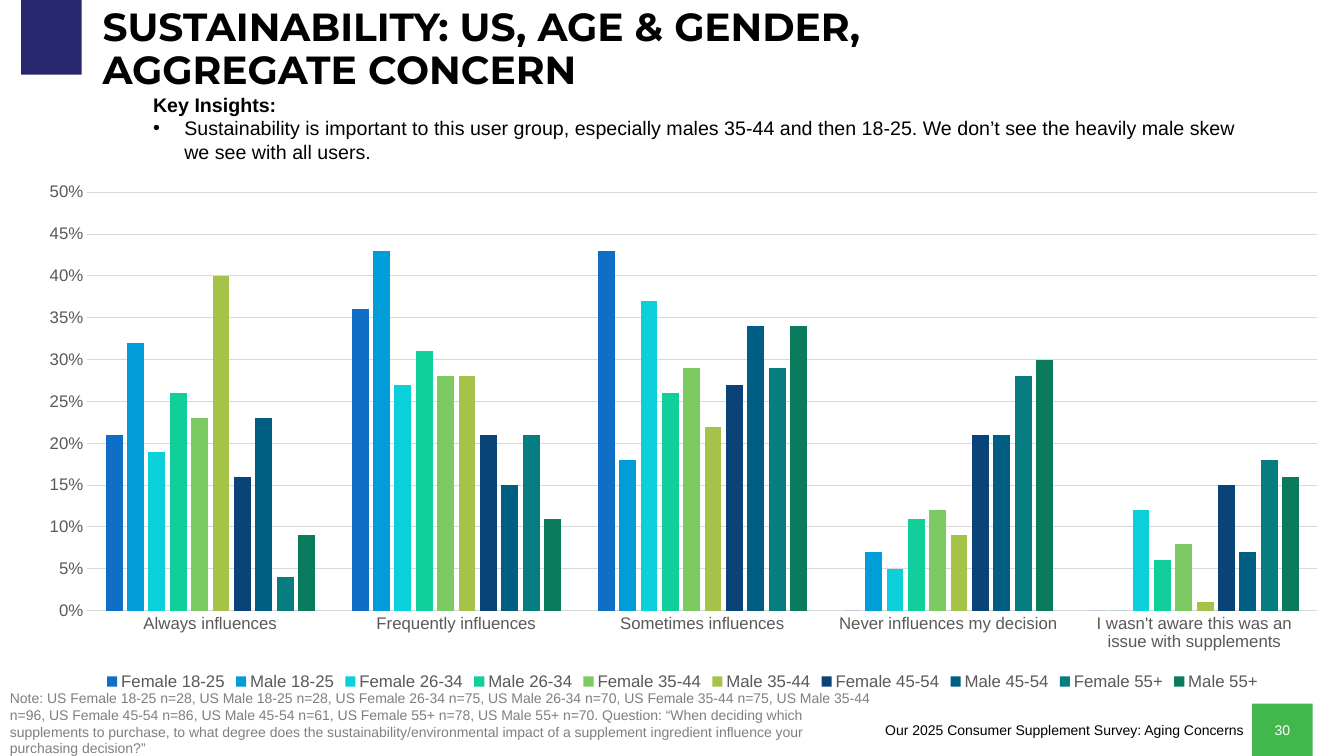
from lxml.etree import SubElement
from pptx import Presentation
from pptx.chart.data import CategoryChartData
from pptx.dml.color import RGBColor
from pptx.enum.chart import XL_CHART_TYPE, XL_LEGEND_POSITION, XL_TICK_MARK
from pptx.enum.shapes import MSO_SHAPE
from pptx.enum.text import MSO_ANCHOR, PP_ALIGN
from pptx.oxml.ns import qn
from pptx.util import Inches, Pt

TITLE = "SUSTAINABILITY: US, AGE & GENDER, \vAGGREGATE CONCERN"
INSIGHTS_HEADING = "Key Insights:"
INSIGHT = (
    "Sustainability is important to this user group, especially males 35-44 and then 18-25. "
    "We don’t see the heavily male skew we see with all users."
)
NOTE = (
    "Note: US Female 18-25 n=28, US Male 18-25 n=28, US Female 26-34 n=75, US Male 26-34 n=70, "
    "US Female 35-44 n=75, US Male 35-44 n=96, US Female 45-54 n=86, US Male 45-54 n=61, "
    "US Female 55+ n=78, US Male 55+ n=70. Question: “When deciding which supplements to purchase, "
    "to what degree does the sustainability/environmental impact of a supplement ingredient "
    "influence your purchasing decision?”"
)
FOOTER = "Our 2025 Consumer Supplement Survey: Aging Concerns"
PAGE_NUMBER = "30"

ANSWERS = [
    "Always influences",
    "Frequently influences",
    "Sometimes influences",
    "Never influences my decision",
    "I wasn't aware this was an issue with supplements",
]
GROUPS = [
    ("Female 18-25", "0F6FC6", (0.21, 0.36, 0.43, 0, 0)),
    ("Male 18-25", "009DD9", (0.32, 0.43, 0.18, 0.07, 0)),
    ("Female 26-34", "0BD0D9", (0.19, 0.27, 0.37, 0.05, 0.12)),
    ("Male 26-34", "10CF9B", (0.26, 0.31, 0.26, 0.11, 0.06)),
    ("Female 35-44", "7CCA62", (0.23, 0.28, 0.29, 0.12, 0.08)),
    ("Male 35-44", "A5C249", (0.4, 0.28, 0.22, 0.09, 0.01)),
    ("Female 45-54", "094377", (0.16, 0.21, 0.27, 0.21, 0.15)),
    ("Male 45-54", "005E82", (0.23, 0.15, 0.34, 0.21, 0.07)),
    ("Female 55+", "077D82", (0.04, 0.21, 0.29, 0.28, 0.18)),
    ("Male 55+", "0A7C5D", (0.09, 0.11, 0.34, 0.3, 0.16)),
]
PLOT_AREA = {"x": 0.05, "y": 0.04, "w": 0.93, "h": 0.8}
GRID_GREY = "D9D9D9"
LABEL_GREY = "595959"


def color(hex_code):
    return RGBColor.from_string(hex_code)


def style_font(font, size, hex_code, name="Arial", bold=False):
    font.size = Pt(size)
    font.name = name
    font.bold = bold
    font.color.rgb = color(hex_code)


def add_block(page, place, hex_code):
    block = page.shapes.add_shape(MSO_SHAPE.RECTANGLE, *map(Inches, place))
    block.shadow.inherit = False
    block.fill.solid()
    block.fill.fore_color.rgb = color(hex_code)
    block.line.fill.background()
    return block


def add_text(page, place, text, size, hex_code, **font_options):
    box = page.shapes.add_textbox(*map(Inches, place))
    frame = box.text_frame
    frame.word_wrap = True
    frame.text = text
    for para in frame.paragraphs:
        for span in para.runs:
            style_font(span.font, size, hex_code, **font_options)
    return frame


def make_bullet(para):
    properties = para._p.get_or_add_pPr()
    properties.set("marL", str(Inches(0.31)))
    properties.set("indent", str(Inches(-0.31)))
    SubElement(properties, qn("a:buFont"), typeface="Arial")
    SubElement(properties, qn("a:buChar"), char="•")


def place_plot(chart):
    """Fix the inner plot area as fractions of the chart frame."""
    plot_area = chart._chartSpace.chart.plotArea
    for old_layout in plot_area.findall(qn("c:layout")):
        plot_area.remove(old_layout)
    layout = SubElement(plot_area, qn("c:layout"))
    plot_area.insert(0, layout)
    manual = SubElement(layout, qn("c:manualLayout"))
    SubElement(manual, qn("c:layoutTarget"), val="inner")
    for side in "xy":
        SubElement(manual, qn(f"c:{side}Mode"), val="edge")
    for side, share in PLOT_AREA.items():
        SubElement(manual, qn(f"c:{side}"), val=str(share))


def add_influence_chart(page):
    data = CategoryChartData(number_format="0%")
    data.categories = ANSWERS
    for name, _, shares in GROUPS:
        data.add_series(name, shares)
    place = map(Inches, (0.21, 1.7, 13.12, 5.19))
    chart = page.shapes.add_chart(XL_CHART_TYPE.COLUMN_CLUSTERED, *place, data).chart
    chart.has_title = False
    style_font(chart.font, 12, "000000")

    plot = chart.plots[0]
    plot.vary_by_categories = False
    plot.gap_width = 219
    plot.overlap = -27
    for series, (_, hex_code, _) in zip(plot.series, GROUPS):
        series.format.fill.solid()
        series.format.fill.fore_color.rgb = color(hex_code)
        series.invert_if_negative = False

    answers, shares = chart.category_axis, chart.value_axis
    for axis in (answers, shares):
        axis.major_tick_mark = axis.minor_tick_mark = XL_TICK_MARK.NONE
        style_font(axis.tick_labels.font, 12, LABEL_GREY)
    shares.minimum_scale, shares.maximum_scale, shares.major_unit = 0, 0.5, 0.05
    shares.tick_labels.number_format = "0%"
    shares.tick_labels.number_format_is_linked = False
    shares.format.line.fill.background()
    for line in (answers.format.line, shares.major_gridlines.format.line):
        line.color.rgb = color(GRID_GREY)
        line.width = Pt(0.75)

    chart.has_legend = True
    chart.legend.position = XL_LEGEND_POSITION.BOTTOM
    chart.legend.include_in_layout = False
    style_font(chart.legend.font, 12, LABEL_GREY)
    place_plot(chart)


def main():
    deck = Presentation()
    deck.slide_width, deck.slide_height = Inches(13.33), Inches(7.5)
    page = deck.slides.add_slide(deck.slide_layouts[6])

    add_block(page, (0.21, -0.05, 0.6, 0.79), "27276E")
    footer = add_text(page, (8.64, 7.11, 3.79, 0.27), FOOTER, 10, "000000")
    footer.paragraphs[0].alignment = PP_ALIGN.RIGHT

    number = add_block(page, (12.42, 6.98, 0.6, 0.52), "42B74D").text_frame
    number.text = PAGE_NUMBER
    number.vertical_anchor = MSO_ANCHOR.MIDDLE
    number.paragraphs[0].alignment = PP_ALIGN.CENTER
    style_font(number.paragraphs[0].runs[0].font, 10, "FFFFFF")

    title = add_text(page, (0.92, 0.25, 11.5, 0.5), TITLE, 28, "000000",
                     name="Montserrat", bold=True)
    title.vertical_anchor = MSO_ANCHOR.MIDDLE
    title.paragraphs[0].line_spacing = 0.9

    add_text(page, (0, 6.79, 8.74, 0.77), NOTE, 10, "7F7F7F")

    insights = add_text(page, (1.42, 0.87, 11, 0.81), f"{INSIGHTS_HEADING}\n{INSIGHT}",
                        14, "000000")
    heading, insight = insights.paragraphs
    heading.runs[0].font.bold = True
    make_bullet(insight)

    add_influence_chart(page)
    deck.save("out.pptx")


if __name__ == "__main__":
    main()
